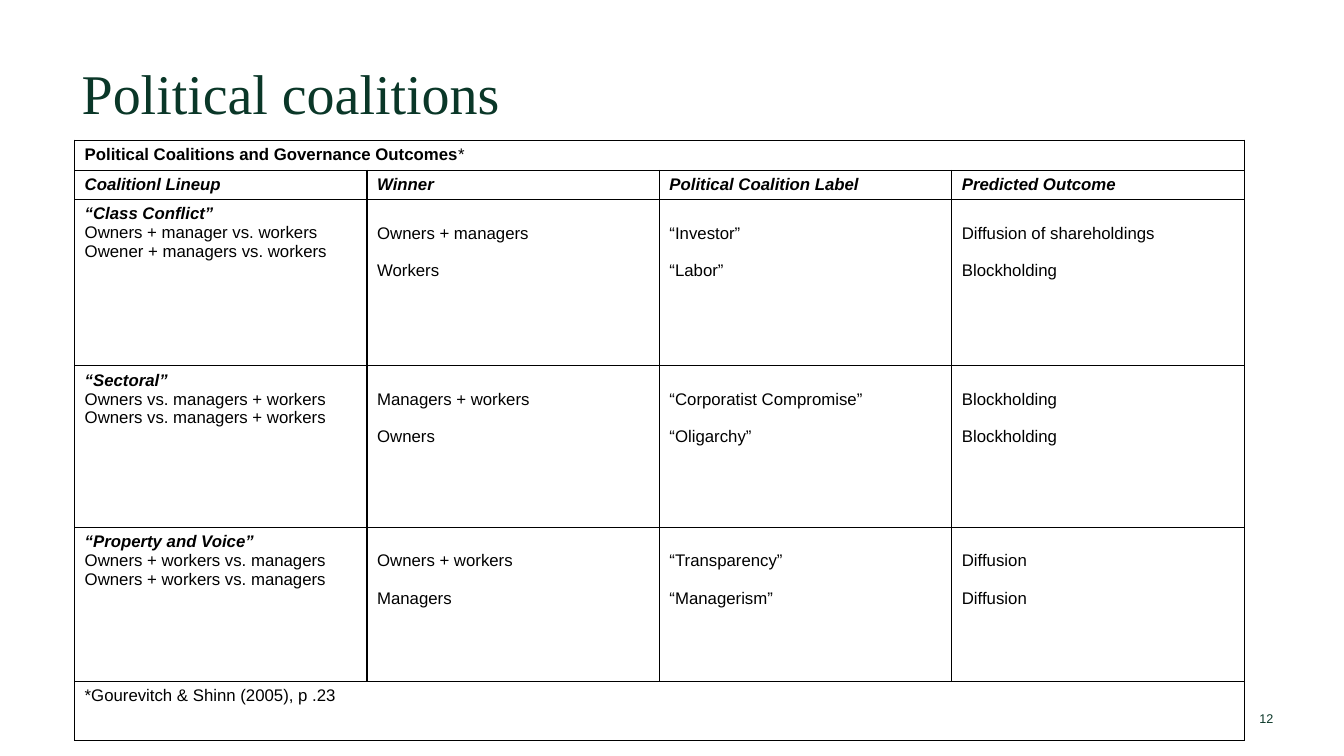
"""Build the slide on political coalitions and governance outcomes."""
from lxml import etree
from pptx import Presentation
from pptx.dml.color import RGBColor
from pptx.enum.text import MSO_ANCHOR, MSO_AUTO_SIZE, PP_ALIGN
from pptx.oxml.ns import qn
from pptx.util import Pt

TOP, MIDDLE = MSO_ANCHOR.TOP, MSO_ANCHOR.MIDDLE
FIXED = MSO_AUTO_SIZE.NONE
LEFT, RIGHT = PP_ALIGN.LEFT, PP_ALIGN.RIGHT
PX = 9144
HEX = {"ink": "000000", "green": "0A3728"}
PLAIN = {"size": Pt(12), "name": "Arial", "bold": False, "italic": False}
BOLD = {**PLAIN, "bold": True}
HEAD = {**BOLD, "italic": True}
TITLE = {"size": Pt(40), "name": "Times New Roman", "bold": False}
PAGE = {"size": Pt(9), "name": "Arial"}


def write(para, text, form, color="ink"):
    run = para.add_run()
    run.text = text
    for key, value in form.items():
        setattr(run.font, key, value)
    run.font.color.rgb = RGBColor.from_string(HEX[color])


def border(cell):
    props = cell._tc.get_or_add_tcPr()
    for i, side in enumerate(("lnL", "lnR", "lnT", "lnB")):
        line = etree.Element(qn("a:" + side), w=str(Pt(1)))
        fill = etree.SubElement(line, qn("a:solidFill"))
        etree.SubElement(fill, qn("a:srgbClr"), val=HEX["ink"])
        props.insert(i, line)


deck = Presentation()
deck.slide_width, deck.slide_height = 1333 * PX, 750 * PX
slide = deck.slides.add_slide(deck.slide_layouts[5])

title = slide.shapes.title
place = {"left": 71, "top": 61, "width": 1192, "height": 87}
for key, value in place.items():
    setattr(title, key, value * PX)
frame = title.text_frame
for key, value in {"vertical_anchor": TOP, "auto_size": FIXED, "word_wrap": True}.items():
    setattr(frame, key, value)
para = frame.paragraphs[0]
para.alignment, para.line_spacing = LEFT, 0.9
write(para, "Political coalitions", TITLE, "green")

heads = ["Coalitionl Lineup", "Winner", "Political Coalition Label", "Predicted Outcome"]
groups = [
    (["“Class Conflict”", "Owners + manager vs. workers", "Owener + managers vs. workers"],
     ["Owners + managers", "Workers"],
     ["“Investor”", "“Labor”"],
     ["Diffusion of shareholdings", "Blockholding"]),
    (["“Sectoral”", "Owners vs. managers + workers", "Owners vs. managers + workers"],
     ["Managers + workers", "Owners"],
     ["“Corporatist Compromise”", "“Oligarchy”"],
     ["Blockholding", "Blockholding"]),
    (["“Property and Voice”", "Owners + workers vs. managers", "Owners + workers vs. managers"],
     ["Owners + workers", "Managers"],
     ["“Transparency”", "“Managerism”"],
     ["Diffusion", "Diffusion"]),
]
sizes = [30, 29, 165, 160, 153, 59]
table = slide.shapes.add_table(
    len(sizes), len(heads), 74 * PX, 139 * PX, 1160 * PX, sum(sizes) * PX).table
table.first_row = table.horz_banding = False
for row, size in zip(table.rows, sizes):
    row.height = size * PX
    for cell in row.cells:
        cell.fill.background()
        border(cell)
for i in (0, len(sizes) - 1):
    table.cell(i, 0).merge(table.cell(i, len(heads) - 1))

para = table.cell(0, 0).text_frame.paragraphs[0]
write(para, "Political Coalitions and Governance Outcomes", BOLD)
write(para, "*", PLAIN)
for i, head in enumerate(heads):
    write(table.cell(1, i).text_frame.paragraphs[0], head, HEAD)
for i, group in enumerate(groups, 2):
    for j, lines in enumerate(group):
        cell = table.cell(i, j)
        if j:
            cell.margin_top = 24 * PX
        for k, text in enumerate(lines):
            frame = cell.text_frame
            para = frame.add_paragraph() if k else frame.paragraphs[0]
            if j and k:
                para.space_before = Pt(13.4)
            write(para, text, PLAIN if j or k else HEAD)
note = table.cell(len(sizes) - 1, 0).text_frame.paragraphs[0]
write(note, "*Gourevitch & Shinn (2005), p .23", PLAIN)

page = slide.shapes.add_textbox(1206 * PX, 701 * PX, 57 * PX, 23 * PX).text_frame
form = {"margin_left": 0, "margin_right": 0, "margin_top": 0, "margin_bottom": 0,
        "vertical_anchor": MIDDLE, "word_wrap": True}
for key, value in form.items():
    setattr(page, key, value)
para = page.paragraphs[0]
para.alignment = RIGHT
write(para, "12", PAGE, "green")

deck.save("out.pptx")
